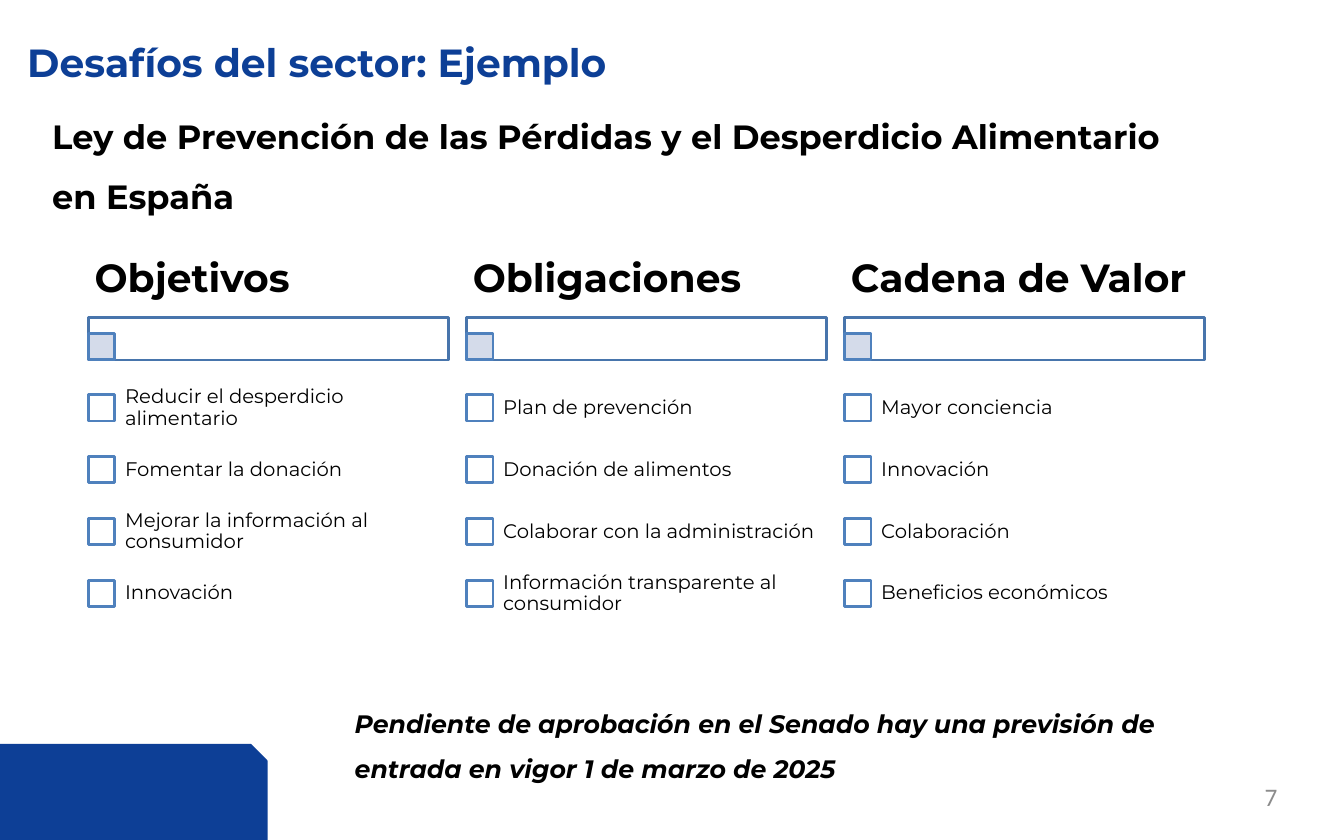
from lxml.etree import SubElement
from pptx import Presentation
from pptx.dml.color import RGBColor
from pptx.enum.shapes import MSO_SHAPE
from pptx.enum.text import MSO_ANCHOR, MSO_AUTO_SIZE, PP_ALIGN
from pptx.oxml.ns import qn
from pptx.util import Inches, Pt

BLUE, BLACK, GREY = "0D3F96", "000000", "8C8C8C"
WHITE, BAR_LINE, BOX_LINE, TINT = "FFFFFF", "4875AC", "4F81BD", "D0D8E8"

deck = Presentation()
deck.slide_width, deck.slide_height = Inches(13.33), Inches(8.33)
page = deck.slides.add_slide(deck.slide_layouts[5])


def add_block(kind, place, fill, line):
    block = page.shapes.add_shape(kind, *map(Inches, place))
    block.shadow.inherit = False
    block.fill.solid()
    block.fill.fore_color.rgb = RGBColor.from_string(fill)
    block.line.color.rgb = RGBColor.from_string(line)
    block.line.width = Pt(2)
    return block


def write(place, text, size, color=BLACK, bold=False, italic=False, spacing=1.0,
          margins=(0.1, 0.05), anchor=MSO_ANCHOR.TOP, align=PP_ALIGN.LEFT,
          font="Montserrat", box=None):
    box = box or page.shapes.add_textbox(0, 0, 0, 0)
    box.left, box.top, box.width, box.height = map(Inches, place)
    frame = box.text_frame
    frame.word_wrap = True
    frame.auto_size = MSO_AUTO_SIZE.NONE
    frame.vertical_anchor = anchor
    frame.margin_left = frame.margin_right = Inches(margins[0])
    frame.margin_top = frame.margin_bottom = Inches(margins[1])
    para = frame.paragraphs[0]
    para.alignment = align
    para.line_spacing = spacing
    span = para.add_run()
    span.text = text
    span.font.name, span.font.size = font, Pt(size)
    span.font.bold, span.font.italic = bold, italic
    span.font.color.rgb = RGBColor.from_string(color)


# Title, subtitle and page number
write((0.17, 0.33, 11.58, 1.06), "Desafíos del sector: Ejemplo", 28, BLUE,
      bold=True, box=page.shapes.title)
write((0.42, 0.9, 11.24, 1.24),
      "Ley de Prevención de las Pérdidas y el Desperdicio Alimentario en España",
      24, bold=True, spacing=1.5)
write((9.6, 7.75, 3.07, 0.42), "7", 18, GREY, margins=(0, 0),
      align=PP_ALIGN.RIGHT, font="Calibri")

# Corner block
add_block(MSO_SHAPE.SNIP_1_RECTANGLE, (0, 7.39, 2.64, 0.94), BLUE, BLUE)

# Three columns of checklist items
columns = {
    "Objetivos": ["Reducir el desperdicio alimentario", "Fomentar la donación",
                  "Mejorar la información al consumidor", "Innovación"],
    "Obligaciones": ["Plan de prevención", "Donación de alimentos",
                     "Colaborar con la administración",
                     "Información transparente al consumidor"],
    "Cadena de Valor": ["Mayor conciencia", "Innovación", "Colaboración",
                        "Beneficios económicos"],
}
LEFT, COLUMN_STEP, COLUMN_WIDTH = 0.88, 3.75, 3.57
BAR_TOP, BAR_HEIGHT, HEADING_HEIGHT = 3.15, 0.42, 0.76
ITEMS_TOP, ROW_HEIGHT, SQUARE = 3.74, 0.613, 0.26

for column, (heading, items) in enumerate(columns.items()):
    left = LEFT + column * COLUMN_STEP
    add_block(MSO_SHAPE.RECTANGLE, (left, BAR_TOP, COLUMN_WIDTH, BAR_HEIGHT),
              WHITE, BAR_LINE)
    marker = add_block(MSO_SHAPE.RECTANGLE,
                       (left, BAR_TOP + BAR_HEIGHT - SQUARE, SQUARE, SQUARE),
                       TINT, BOX_LINE)
    tint = marker.fill._xPr.find(qn("a:solidFill"))[0]
    SubElement(tint, qn("a:alpha"), val="90000")
    write((left, BAR_TOP - HEADING_HEIGHT, COLUMN_WIDTH, HEADING_HEIGHT), heading,
          28, bold=True, spacing=0.9, margins=(0.06, 0.04), anchor=MSO_ANCHOR.MIDDLE)

    for row, item in enumerate(items):
        top = ITEMS_TOP + row * ROW_HEIGHT
        add_block(MSO_SHAPE.RECTANGLE,
                  (left, top + (ROW_HEIGHT - SQUARE) / 2, SQUARE, SQUARE),
                  WHITE, BOX_LINE)
        write((left + 0.25, top, COLUMN_WIDTH - 0.25, ROW_HEIGHT), item, 14,
              spacing=0.9, margins=(0.11, 0.11), anchor=MSO_ANCHOR.MIDDLE)

# Closing note
write((3.42, 6.82, 8.83, 0.96),
      "Pendiente de aprobación en el Senado hay una previsión de entrada en vigor "
      "1 de marzo de 2025", 18, bold=True, italic=True, spacing=1.5)

deck.save("out.pptx")
